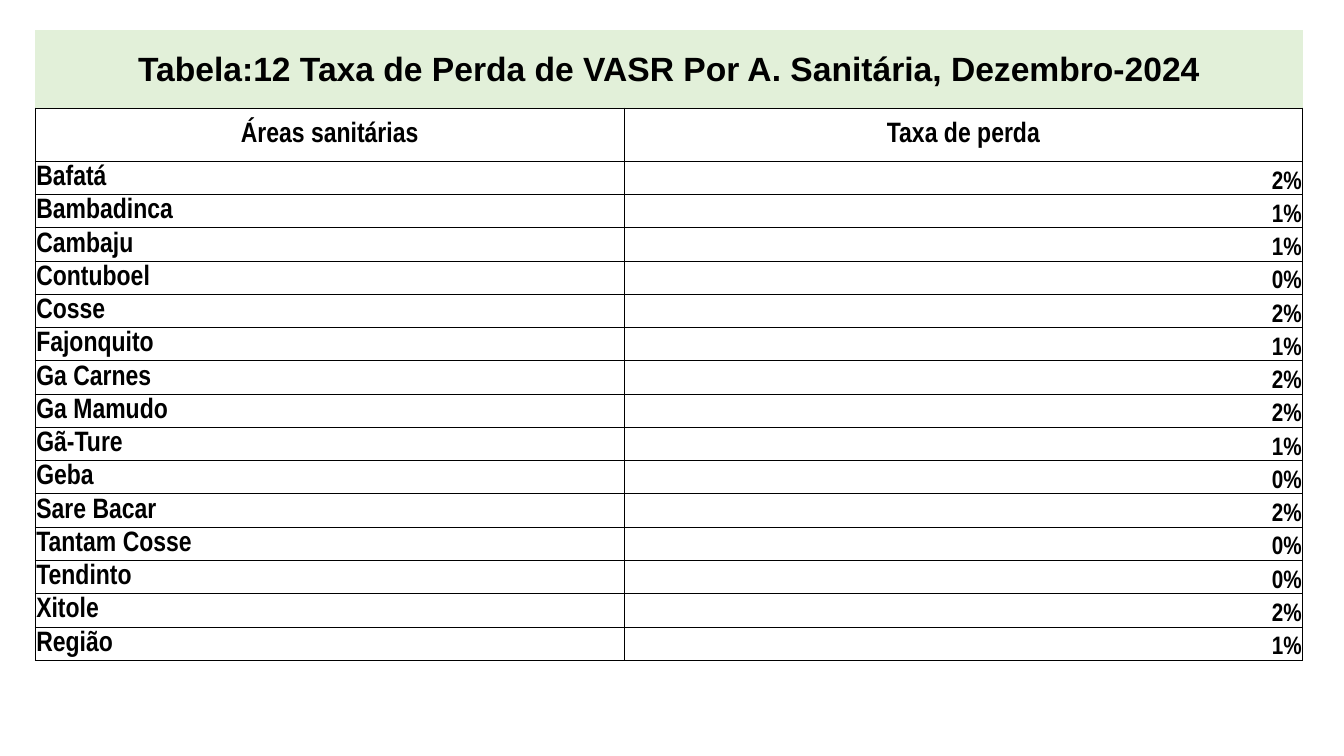
import dataclasses
import lxml.etree
import pptx
import pptx.dml.color
import pptx.enum.text
import pptx.oxml.ns
import pptx.util

ALIGN = pptx.enum.text.PP_ALIGN
ANCHOR = pptx.enum.text.MSO_ANCHOR
INCH = pptx.util.Inches


@dataclasses.dataclass(frozen=True)
class Theme:
    ink: str = "000000"
    paper: str = "FFFFFF"
    band: str = "E2F0D9"
    wide: str = "Arial"
    slim: str = "Arial Narrow"
    title: int = 24
    label: int = 20
    rate: int = 18
    rule: float = 0.5


THEME = Theme()
TITLE = "Tabela:12 Taxa de Perda de VASR Por A. Sanitária, Dezembro-2024"
HEADS = ("Áreas sanitárias", "Taxa de perda")
RATES = (
    ("Bafatá", 2), ("Bambadinca", 1), ("Cambaju", 1), ("Contuboel", 0),
    ("Cosse", 2), ("Fajonquito", 1), ("Ga Carnes", 2), ("Ga Mamudo", 2),
    ("Gã-Ture", 1), ("Geba", 0), ("Sare Bacar", 2), ("Tantam Cosse", 0),
    ("Tendinto", 0), ("Xitole", 2), ("Região", 1),
)
COLS = (5.84, 6.73)
ROWS = (0.77, 0.53) + (0.33,) * len(RATES)


def color(code):
    return pptx.dml.color.RGBColor.from_string(code)


def border(cell, sides):
    qn = pptx.oxml.ns.qn
    props = cell._tc.get_or_add_tcPr()
    for side in "LRTB":
        line = lxml.etree.SubElement(props, qn(f"a:ln{side}"))
        if side in sides:
            line.set("w", str(pptx.util.Pt(THEME.rule)))
            fill = lxml.etree.SubElement(line, qn("a:solidFill"))
            lxml.etree.SubElement(fill, qn("a:srgbClr")).set("val", THEME.ink)
        else:
            lxml.etree.SubElement(line, qn("a:noFill"))


def shade(cell, code, sides="LRTB"):
    border(cell, sides)
    cell.fill.solid()
    cell.fill.fore_color.rgb = color(code)


def write(cell, text, size, face, align, anchor=ANCHOR.MIDDLE):
    cell.margin_left = cell.margin_right = cell.margin_top = INCH(0.01)
    cell.margin_bottom = 0
    cell.vertical_anchor = anchor
    para = cell.text_frame.paragraphs[0]
    para.alignment = align
    run = para.add_run()
    run.text = text
    run.font.size = pptx.util.Pt(size)
    run.font.name = face
    run.font.bold = True
    run.font.color.rgb = color(THEME.ink)


def add_grid(slide):
    frame = slide.shapes.add_table(
        len(ROWS), len(COLS), INCH(0.35), INCH(0.3),
        INCH(sum(COLS)), INCH(sum(ROWS)))
    table = frame.table
    table.horz_banding = False
    for col, width in zip(table.columns, COLS):
        col.width = INCH(width)
    for row, height in zip(table.rows, ROWS):
        row.height = INCH(height)
    return table


def add_title(table):
    for cell in table.rows[0].cells:
        shade(cell, THEME.band, "B")
    first = table.cell(0, 0)
    first.merge(table.cell(0, len(COLS) - 1))
    write(first, TITLE, THEME.title, THEME.wide, ALIGN.CENTER)


def add_heads(table):
    for cell, text in zip(table.rows[1].cells, HEADS):
        shade(cell, THEME.paper)
        write(cell, text, THEME.label, THEME.slim, ALIGN.CENTER)


def add_rates(table):
    for row, (area, rate) in enumerate(RATES, 2):
        left, right = table.rows[row].cells
        shade(left, THEME.paper)
        shade(right, THEME.paper)
        write(left, area, THEME.label, THEME.slim, ALIGN.LEFT)
        write(right, f"{rate}%", THEME.rate, THEME.slim, ALIGN.RIGHT,
              ANCHOR.BOTTOM)


def main():
    deck = pptx.Presentation()
    deck.slide_width, deck.slide_height = INCH(13.33), INCH(7.5)
    slide = deck.slides.add_slide(deck.slide_layouts[6])
    table = add_grid(slide)
    add_title(table)
    add_heads(table)
    add_rates(table)
    deck.save("out.pptx")


if __name__ == "__main__":
    main()
